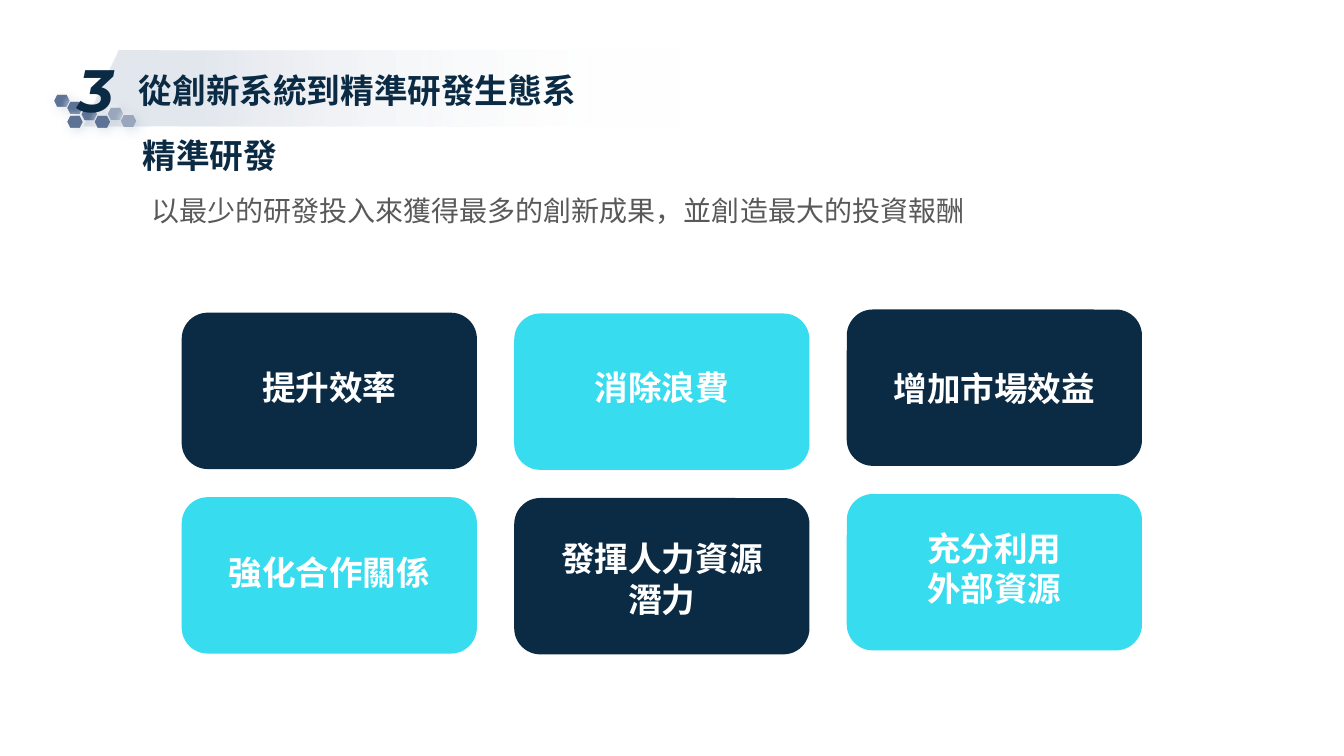
from lxml import etree
from pptx import Presentation
from pptx import util as u
from pptx.dml.color import RGBColor
from pptx.enum import shapes, text
from pptx.oxml import parse_xml
from pptx.oxml.ns import nsdecls, qn

NAVY, CYAN, WHITE, GREY = "0B2A43", "38DCEF", "FFFFFF", "595959"
SLATE, PALE, MIST = "5C7396", "99A6BB", "A2B1C6"
NOTO = "Noto Sans CJK SC"

CARD_W, CARD_H = 7.44, 3.94
STEP_X, STEP_Y = 8.38, 4.65
LEFT = 4.58
TOPS = [7.88, 7.9, 7.8]
# Lines of each label, and the top of its text box
LABELS = [
    [(["提升效率"], 9.12), (["消除浪費"], 9.12), (["增加市場效益"], 9.14)],
    [(["強化合作關係"], 13.79), (["發揮人力資源", "潛力"], 13.44),
     (["充分利用", "外部資源"], 13.18)],
]
CELLS = [
    (1.37, 2.39, SLATE), (1.7, 2.57, SLATE), (2.06, 2.73, SLATE),
    (2.72, 2.72, PALE), (3.05, 2.9, PALE),
    (1.7, 2.92, SLATE), (2.39, 2.92, SLATE),
]


def rgb(code):
    return RGBColor.from_string(code)


def box(*sides):
    return [u.Cm(side) for side in sides]


def write(frame, lines, size, color, font=NOTO, bold=True, align=None):
    """Fill a text frame with one paragraph per line."""
    frame.text = "\n".join(lines)
    for para in frame.paragraphs:
        para.alignment = align
        face = para.font
        face.size, face.bold, face.name = u.Pt(size), bold, font
        face.color.rgb = rgb(color)
        if font == NOTO:
            props = para._p.pPr.find(qn("a:defRPr"))
            etree.SubElement(props, qn("a:ea"), typeface=font)


def add_text(slide, place, lines, size, color, wrap=True, **style):
    frame = slide.shapes.add_textbox(*box(*place)).text_frame
    frame.word_wrap = wrap
    write(frame, lines, size, color, **style)
    return frame


def add_shape(slide, kind, place, color=None):
    shape = slide.shapes.add_shape(kind, *box(*place))
    shape.shadow.inherit = False
    shape.line.fill.background()
    if color:
        shape.fill.solid()
        shape.fill.fore_color.rgb = rgb(color)
    else:
        shape.fill.background()
    return shape


def cast(shape, color, blur, angle):
    """Give the shape a soft outer shadow."""
    props = shape._element.spPr
    props.remove(props.find(qn("a:effectLst")))
    props.append(parse_xml(
        f'<a:effectLst {nsdecls("a")}><a:outerShdw blurRad="{u.Pt(blur)}" '
        f'dist="{u.Pt(3)}" dir="{angle * 60000}" algn="ctr" rotWithShape="0">'
        f'<a:srgbClr val="{color}"><a:alpha val="40000"/></a:srgbClr>'
        '</a:outerShdw></a:effectLst>'))


def add_band(slide):
    """Draw the slanted title band, which fades out to the right."""
    points = [box(*p) for p in
              [(2.11, 3.18), (3, 1.27), (26.47, 1.24), (26.52, 3.2)]]
    pen = slide.shapes.build_freeform(*points[0])
    pen.add_line_segments(points[1:], close=True)
    band = pen.convert_to_shape()
    band.shadow.inherit = False
    band.line.fill.background()
    band.fill.gradient()
    band.fill.gradient_angle = 180
    stops = band._element.spPr.find(qn("a:gradFill")).find(qn("a:gsLst"))
    for stop, (pos, color, alpha) in zip(
            stops, [(38, WHITE, 0), (88, MIST, 30)]):
        stop.set("pos", str(pos * 1000))
        for child in list(stop):
            stop.remove(child)
        tint = etree.SubElement(stop, qn("a:srgbClr"), val=color)
        etree.SubElement(tint, qn("a:alpha"), val=str(alpha * 1000))


def add_comb(slide):
    """Draw each hexagon twice: a dark shadow below, a light one above."""
    for x, y, color in CELLS:
        for glow, blur, angle in [(MIST, 8, 45), (WHITE, 4, 225)]:
            cell = add_shape(slide, shapes.MSO_SHAPE.HEXAGON,
                             (x, y, 0.38, 0.3), color)
            cast(cell, glow, blur, angle)


def add_badge(slide):
    badge = add_shape(slide, shapes.MSO_SHAPE.ROUNDED_RECTANGLE,
                      (1.22, 1.17, 2.39, 2.13))
    badge.adjustments[0] = 0.113
    frame = badge.text_frame
    frame.margin_left = frame.margin_right = 0
    frame.margin_top = frame.margin_bottom = u.Cm(0.18)
    frame.vertical_anchor = text.MSO_ANCHOR.MIDDLE
    write(frame, ["3"], 42.7, NAVY, font="Montserrat",
          align=text.PP_ALIGN.CENTER)
    frame.paragraphs[0].font.italic = True


def add_cards(slide):
    for row, labels in enumerate(LABELS):
        for col in range(len(labels)):
            place = (LEFT + col * STEP_X, TOPS[col] + row * STEP_Y,
                     CARD_W, CARD_H)
            add_shape(slide, shapes.MSO_SHAPE.ROUNDED_RECTANGLE, place,
                      CYAN if (row + col) % 2 else NAVY)
    for labels in LABELS:
        for col, (lines, top) in enumerate(labels):
            wide = 3.94 if len(lines[0]) == 4 else 5.64
            left = LEFT + col * STEP_X + (CARD_W - wide) / 2
            tall = 1.27 if len(lines) == 1 else 2.31
            add_text(slide, (left, top, wide, tall), lines, 24, WHITE,
                     wrap=False, align=text.PP_ALIGN.CENTER)


def main():
    deck = Presentation()
    deck.slide_width, deck.slide_height = box(33.87, 19.05)
    slide = deck.slides.add_slide(deck.slide_layouts[6])
    add_text(slide, (3.35, 3.28, 7.19, 1.27), ["精準研發"], 24, NAVY)
    add_text(slide, (3.56, 4.75, 21.18, 1.12),
             ["以最少的研發投入來獲得最多的創新成果，並創造最大的投資報酬"],
             20, GREY, wrap=False, font="Calibri", bold=False)
    add_cards(slide)
    add_band(slide)
    add_comb(slide)
    add_badge(slide)
    title = add_text(slide, (3.25, 1.19, 15.39, 1.63),
                     ["從創新系統到精準研發生態系"], 24, NAVY)
    title.vertical_anchor = text.MSO_ANCHOR.MIDDLE
    title.paragraphs[0].line_spacing = 1.5
    deck.save("out.pptx")


if __name__ == "__main__":
    main()
